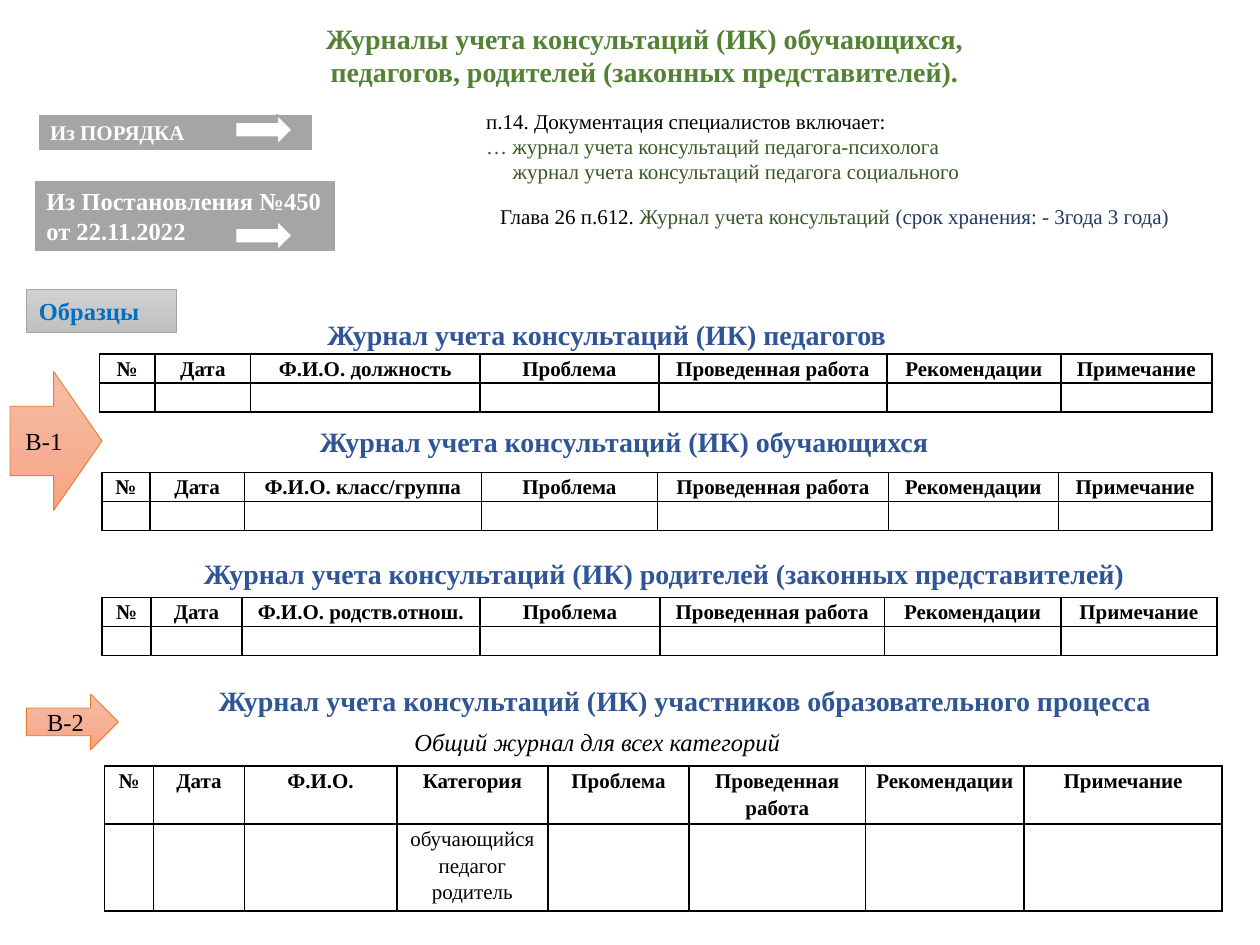
from lxml import etree
from pptx import Presentation
from pptx.dml.color import RGBColor
from pptx.enum.shapes import MSO_SHAPE
from pptx.enum.text import MSO_ANCHOR, PP_ALIGN
from pptx.oxml import parse_xml
from pptx.oxml.ns import nsdecls, qn
from pptx.util import Inches, Pt

RECTANGLE = MSO_SHAPE.RECTANGLE
RIGHT_ARROW = MSO_SHAPE.RIGHT_ARROW
LEFT = PP_ALIGN.LEFT
CENTER = PP_ALIGN.CENTER
TOP = MSO_ANCHOR.TOP
MIDDLE = MSO_ANCHOR.MIDDLE

FONT = "Times New Roman"
BLACK, WHITE, GRAY = "000000", "FFFFFF", "A5A5A5"
TITLE_GREEN, DARK_GREEN, NAVY = "548235", "385723", "203864"
HEADING_BLUE, SAMPLE_BLUE, ORANGE = "2F5597", "0070C0", "ED7D31"
SILVER = ("D2D2D2", "C8C8C8", "C0C0C0")
PEACH = ("F7BDA5", "F5B196", "F8A582")

ROW_HEIGHT = 0.23
JOURNALS = [
    ("Журнал учета консультаций (ИК) педагогов", (2.5, 2.47, 4.7, 0.37),
     "Ф.И.О. должность", (0.79, 2.81),
     (0.44, 0.76, 1.82, 1.42, 1.81, 1.38, 1.2)),
    ("Журнал учета консультаций (ИК) обучающихся", (2.44, 3.32, 5.92, 0.37),
     "Ф.И.О. класс/группа", (0.81, 3.75),
     (0.38, 0.75, 1.88, 1.4, 1.83, 1.35, 1.22)),
    ("Журнал учета консультаций (ИК) родителей (законных представителей)",
     (1.52, 4.37, 8.04, 0.37),
     "Ф.И.О. родств.отнош.", (0.81, 4.74),
     (0.39, 0.72, 1.89, 1.43, 1.78, 1.4, 1.24)),
]


def color(value):
    return RGBColor.from_string(value)


def style(font, size, ink, bold=False, italic=False):
    font.name = FONT
    font.size = Pt(size)
    font.bold = bold
    font.italic = italic
    font.color.rgb = color(ink)


def write(frame, lines, size, ink, bold=False, italic=False, align=LEFT, anchor=TOP):
    frame.word_wrap = True
    frame.vertical_anchor = anchor
    for index, line in enumerate(lines):
        paragraph = frame.paragraphs[0] if index == 0 else frame.add_paragraph()
        paragraph.alignment = align
        style(paragraph.font, size, ink, bold, italic)
        paragraph.add_run().text = line


def add_text(slide, box, lines, size, ink, **options):
    frame = slide.shapes.add_textbox(*map(Inches, box)).text_frame
    write(frame, lines, size, ink, **options)
    return frame


def add_figure(slide, kind, box, fill, outline, width):
    figure = slide.shapes.add_shape(kind, *map(Inches, box))
    figure.shadow.inherit = False
    if isinstance(fill, tuple):
        stops = "".join(
            f'<a:gs pos="{index * 50000}"><a:srgbClr val="{stop}"/></a:gs>'
            for index, stop in enumerate(fill))
        figure._element.spPr.insert(2, parse_xml(
            f'<a:gradFill {nsdecls("a")}><a:gsLst>{stops}</a:gsLst>'
            '<a:lin ang="5400000" scaled="0"/></a:gradFill>'))
    else:
        figure.fill.solid()
        figure.fill.fore_color.rgb = color(fill)
    figure.line.color.rgb = color(outline)
    figure.line.width = Pt(width)
    return figure


def add_source_label(slide, box, lines, size, arrow_top):
    label = add_figure(slide, RECTANGLE, box, GRAY, WHITE, 1.5)
    write(label.text_frame, lines, size, WHITE, bold=True)
    add_figure(slide, RIGHT_ARROW, (1.87, arrow_top, 0.45, 0.24), WHITE, GRAY, 1)


def add_order_excerpt(slide, box):
    frame = add_text(slide, box, [
        "п.14. Документация специалистов включает:",
        "… журнал учета консультаций педагога-психолога",
        "журнал учета консультаций педагога социального",
    ], 12, DARK_GREEN)
    frame.paragraphs[0].font.color.rgb = color(BLACK)
    frame.paragraphs[2]._p.get_or_add_pPr().set("marL", str(Inches(0.21)))


def add_chapter_excerpt(slide, box):
    frame = add_text(slide, box, ["Глава 26 п.612. "], 12, BLACK, align=CENTER)
    for words, ink in [("Журнал учета консультаций ", DARK_GREEN),
                       ("(срок хранения: - 3года 3 года)", NAVY)]:
        run = frame.paragraphs[0].add_run()
        run.text = words
        run.font.color.rgb = color(ink)


def add_variant(slide, box, name):
    arrow = add_figure(slide, RIGHT_ARROW, box, PEACH, ORANGE, 0.5)
    write(arrow.text_frame, [name], 14, BLACK, align=CENTER, anchor=MIDDLE)
    return arrow


def add_borders(cell):
    properties = cell._tc.get_or_add_tcPr()
    for side in ("lnL", "lnR", "lnT", "lnB"):
        properties.append(parse_xml(
            f'<a:{side} {nsdecls("a")} w="12700"><a:solidFill>'
            f'<a:srgbClr val="{BLACK}"/></a:solidFill></a:{side}>'))


def add_journal_table(slide, corner, widths, line_counts, rows):
    heights = [count * ROW_HEIGHT for count in line_counts]
    box = (*corner, sum(widths), sum(heights))
    table = slide.shapes.add_table(len(rows), len(widths), *map(Inches, box)).table
    table.first_row = False
    table.horz_banding = False
    for column, width in zip(table.columns, widths):
        column.width = Inches(width)
    for row_index, (row, height, texts) in enumerate(zip(table.rows, heights, rows)):
        row.height = Inches(height)
        for cell, text in zip(row.cells, texts):
            cell.margin_left = cell.margin_right = Inches(0.07)
            cell.margin_top = cell.margin_bottom = 0
            add_borders(cell)
            cell.fill.background()
            lines = text.split("\n") if text else []
            write(cell.text_frame, lines, 12, BLACK, bold=row_index == 0, align=CENTER)
            for paragraph in cell.text_frame.paragraphs:
                paragraph.line_spacing = 1.15
                if not text:
                    etree.SubElement(paragraph._p, qn("a:endParaRPr"), sz="1200")


def add_journal(slide, heading, heading_box, person, corner, widths):
    add_text(slide, heading_box, [heading], 16, HEADING_BLUE, bold=True)
    header = ["№", "Дата", person, "Проблема", "Проведенная работа",
              "Рекомендации", "Примечание"]
    add_journal_table(slide, corner, widths, (1, 1), [header, [""] * len(header)])


def add_common_journal(slide):
    add_text(slide, (1.28, 5.38, 8.31, 0.37),
             ["Журнал учета консультаций (ИК) участников образовательного процесса"],
             16, HEADING_BLUE, bold=True, align=CENTER)
    add_text(slide, (3.19, 5.72, 3.84, 0.34), ["Общий журнал для всех категорий"],
             14, BLACK, italic=True)
    header = ["№", "Дата", "Ф.И.О.", "Категория", "Проблема",
              "Проведенная работа", "Рекомендации", "Примечание"]
    entry = ["", "", "", "обучающийся\nпедагог\nродитель", "", "", "", ""]
    add_journal_table(slide, (0.83, 6.08),
                      (0.39, 0.72, 1.21, 1.2, 1.12, 1.4, 1.26, 1.57),
                      (2, 3), [header, entry])


def main():
    presentation = Presentation()
    presentation.slide_width = Inches(10)
    presentation.slide_height = Inches(7.5)
    slide = presentation.slides.add_slide(presentation.slide_layouts[6])

    add_text(slide, (1.65, 0.12, 6.93, 0.64),
             ["Журналы учета консультаций (ИК) обучающихся,",
              "педагогов, родителей (законных представителей)."],
             16, TITLE_GREEN, bold=True, align=CENTER)
    add_source_label(slide, (0.3, 0.9, 2.19, 0.3), ["Из ПОРЯДКА"], 12, 0.91)
    add_order_excerpt(slide, (3.76, 0.81, 4.35, 0.71))
    add_source_label(slide, (0.27, 1.43, 2.4, 0.57),
                     ["Из Постановления №450", "от 22.11.2022"], 14, 1.75)
    add_chapter_excerpt(slide, (3.76, 1.57, 5.73, 0.3))

    samples = add_figure(slide, RECTANGLE, (0.21, 2.3, 1.19, 0.34), SILVER, GRAY, 0.5)
    write(samples.text_frame, ["Образцы"], 14, SAMPLE_BLUE, bold=True)
    first_variant = add_variant(slide, (0.08, 2.95, 0.73, 1.1), "В-1")
    first_variant.adjustments[1] = 0.525
    for journal in JOURNALS:
        add_journal(slide, *journal)
    add_variant(slide, (0.21, 5.51, 0.73, 0.44), "В-2")
    add_common_journal(slide)

    presentation.save("out.pptx")


if __name__ == "__main__":
    main()
